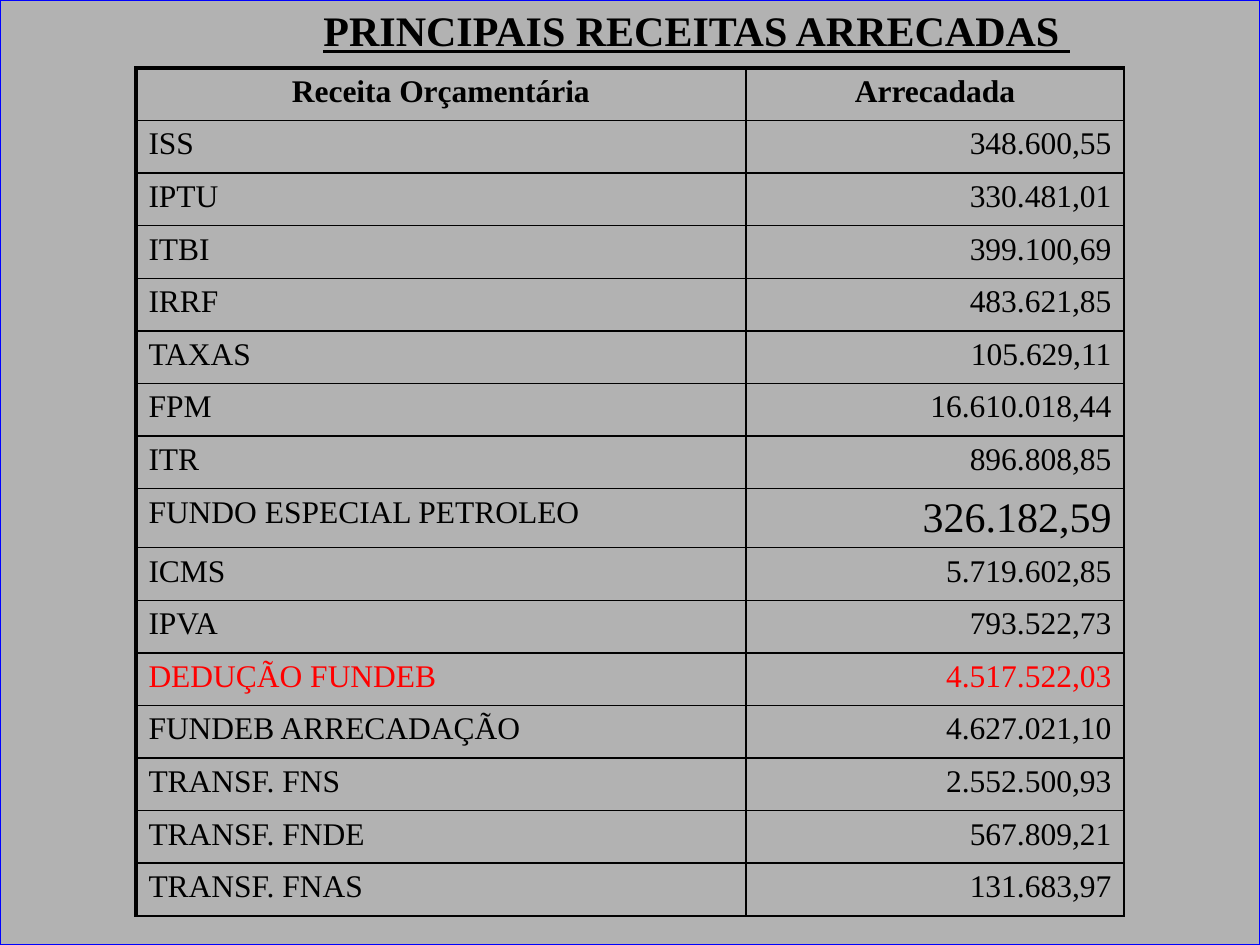
from lxml.etree import SubElement
from pptx import Presentation
from pptx.dml.color import RGBColor
from pptx.enum.shapes import MSO_SHAPE
from pptx.enum.text import MSO_ANCHOR, MSO_AUTO_SIZE, PP_ALIGN
from pptx.oxml.ns import qn
from pptx.util import Cm, Pt

COLORS = {"background": "B2B2B2", "frame": "0000FF", "text": "000000", "deduction": "FF0000"}
HEADER = ("Receita Orçamentária", "Arrecadada")
REVENUES = [
    ("ISS", "348.600,55"),
    ("IPTU", "330.481,01"),
    ("ITBI", "399.100,69"),
    ("IRRF", "483.621,85"),
    ("TAXAS", "105.629,11"),
    ("FPM", "16.610.018,44"),
    ("ITR", "896.808,85"),
    ("FUNDO ESPECIAL PETROLEO", "326.182,59"),
    ("ICMS", "5.719.602,85"),
    ("IPVA", "793.522,73"),
    ("DEDUÇÃO FUNDEB", "4.517.522,03"),
    ("FUNDEB ARRECADAÇÃO", "4.627.021,10"),
    ("TRANSF. FNS", "2.552.500,93"),
    ("TRANSF. FNDE", "567.809,21"),
    ("TRANSF. FNAS", "131.683,97"),
]


def write(frame, text, size=18, color="text", align=PP_ALIGN.LEFT, bold=False, underline=False):
    paragraph = frame.paragraphs[0]
    paragraph.alignment = align
    run = paragraph.add_run()
    run.text = text
    run.font.name = "Times New Roman"
    run.font.size = Pt(size)
    run.font.bold = bold
    run.font.underline = underline
    run.font.color.rgb = RGBColor.from_string(COLORS[color])


def set_borders(cell, **widths):
    """Draw the cell's edges, given as L, R, T and B in points."""
    properties = cell._tc.get_or_add_tcPr()
    for edge, width in widths.items():
        line = SubElement(properties, qn(f"a:ln{edge}"), w=str(Pt(width)))
        fill = SubElement(line, qn("a:solidFill"))
        SubElement(fill, qn("a:srgbClr"), val=COLORS["text"])


prs = Presentation()
prs.slide_width, prs.slide_height = Cm(25.4), Cm(19.05)
slide = prs.slides.add_slide(prs.slide_layouts[5])

background = slide.shapes.add_shape(MSO_SHAPE.RECTANGLE, 0, 0, prs.slide_width, prs.slide_height)
background.shadow.inherit = False
background.fill.solid()
background.fill.fore_color.rgb = RGBColor.from_string(COLORS["background"])
background.line.color.rgb = RGBColor.from_string(COLORS["frame"])
background.line.width = Pt(0.75)

rows = [HEADER, *REVENUES]
row_height = 1.06
revenue_table = slide.shapes.add_table(
    len(rows), 2, Cm(2.74), Cm(1.37), Cm(19.92), Cm(row_height * len(rows))
).table
revenue_table.first_row = False
revenue_table.horz_banding = False
for column, width in zip(revenue_table.columns, (12.3, 7.62)):
    column.width = Cm(width)

for r, row in enumerate(rows):
    revenue_table.rows[r].height = Cm(row_height)
    is_header = r == 0
    for c, text in enumerate(row):
        cell = revenue_table.cell(r, c)
        set_borders(cell, L=2.25 if c == 0 else 1, R=1, T=2.25 if is_header else 1, B=1)
        cell.fill.background()
        write(
            cell.text_frame,
            text,
            size=24 if text == "326.182,59" else 18,
            color="deduction" if row[0] == "DEDUÇÃO FUNDEB" else "text",
            align=PP_ALIGN.CENTER if is_header else (PP_ALIGN.LEFT, PP_ALIGN.RIGHT)[c],
            bold=is_header,
        )

title = slide.shapes.title
title.left, title.top, title.width, title.height = Cm(2.69), Cm(-0.03), Cm(22.71), Cm(2.79)
title.text_frame.word_wrap = True
title.text_frame.auto_size = MSO_AUTO_SIZE.NONE
title.text_frame.vertical_anchor = MSO_ANCHOR.TOP
write(title.text_frame, "PRINCIPAIS RECEITAS ARRECADAS ", size=24,
      align=PP_ALIGN.CENTER, bold=True, underline=True)
# The title placeholder comes first, so bring it in front of the background
background.element.getparent().append(title.element)

prs.save("out.pptx")
